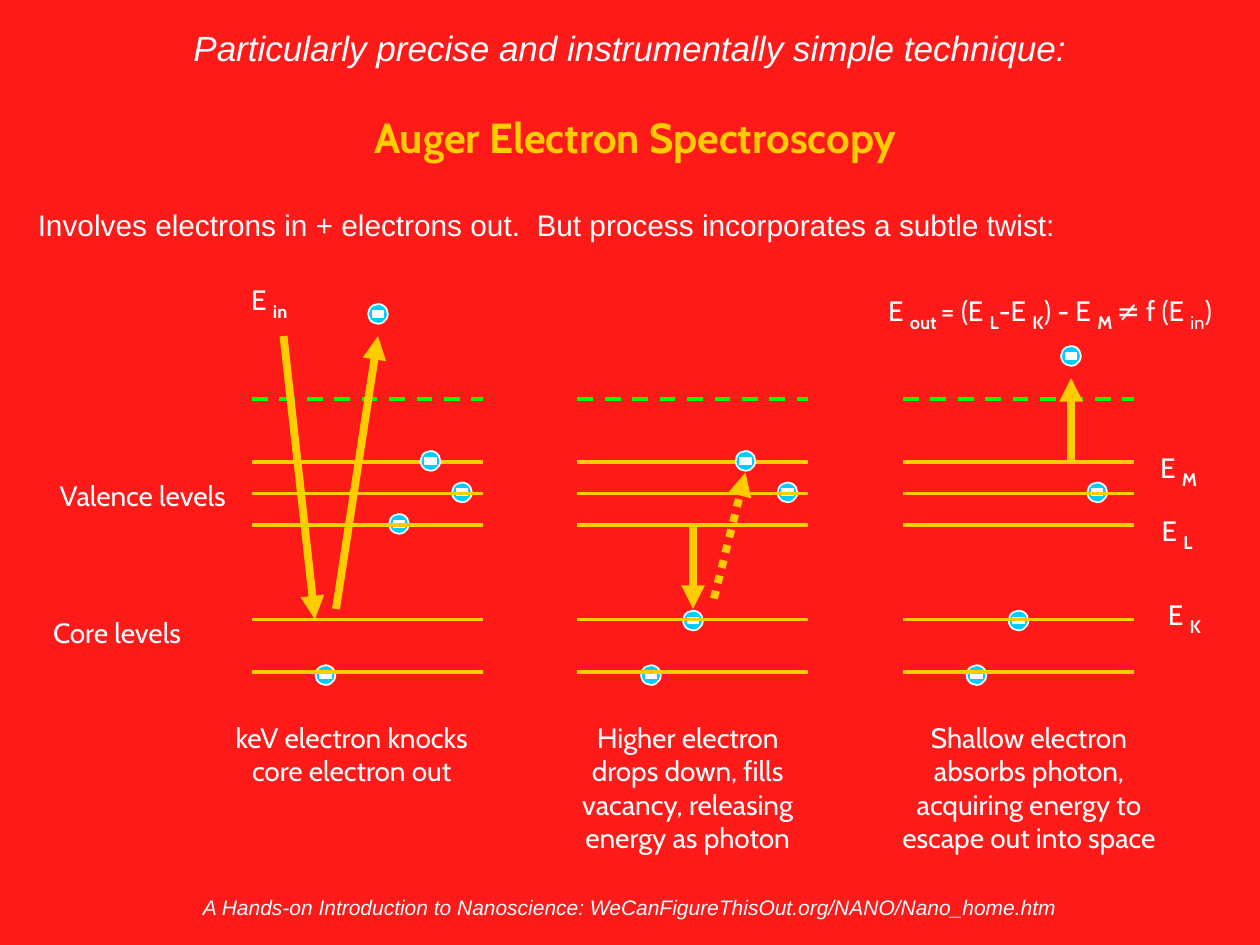
from dataclasses import dataclass
from typing import Optional

from lxml.etree import SubElement
from pptx import Presentation
from pptx.dml.color import RGBColor
from pptx.enum.dml import MSO_LINE
from pptx.enum.shapes import MSO_CONNECTOR, MSO_SHAPE
from pptx.enum.text import MSO_ANCHOR, PP_ALIGN
from pptx.oxml.ns import qn
from pptx.util import Inches, Pt

COLORS = {
    "background": "FF1A1A",
    "gold": "FFCC00",
    "green": "00FF00",
    "electron": "00CCFF",
    "white": "FFFFFF",
    "footer": "E5FFFF",
}
CELL = Inches(10) // 120
LEVEL_WIDTH = 22
PANEL_START, PANEL_STEP = 24, 31
VACUUM_ROW, M_ROW = 38, 44
LOWER_ROWS = (47, 50, 59, 64)
CAPTION_ROW = 68
ELECTRON_SIZE = 1.88
SIGN_WIDTH = 1.16


@dataclass(frozen=True)
class Run:
    text: str
    size: float = 16
    font: str = "Cabin"
    color: str = "white"
    bold: bool = False
    italic: bool = False
    subscript: bool = False


@dataclass(frozen=True)
class Label:
    column: float
    row: float
    columns: float
    rows: float
    runs: tuple[Run, ...]
    anchor: MSO_ANCHOR = MSO_ANCHOR.TOP


@dataclass(frozen=True)
class Arrow:
    start: tuple[float, float]
    end: tuple[float, float]
    dash: Optional[MSO_LINE] = None


@dataclass(frozen=True)
class Panel:
    caption: str
    caption_offset: float
    caption_columns: float
    electrons: tuple[tuple[float, float], ...]
    arrows: tuple[Arrow, ...]


def sub(text: str, bold: bool = True) -> Run:
    return Run(text, size=18, bold=bold, subscript=True)


PANELS = (
    Panel(
        "keV electron knocks core electron out", -3, 25,
        ((7, 64.3), (12, 29.9), (14, 49.9), (20, 46.9), (17, 43.9)),
        (Arrow((3, 32), (6, 59)), Arrow((8, 58), (12, 32))),
    ),
    Panel(
        "Higher electron drops down, fills vacancy, releasing energy as photon", -2, 25,
        ((7, 64.3), (11, 59.1), (20, 46.9), (16, 43.9)),
        (Arrow((11, 50), (11, 58)), Arrow((13, 57), (16, 45), MSO_LINE.ROUND_DOT)),
    ),
    Panel(
        "Shallow electron absorbs photon, acquiring energy to escape out into space", -2, 28,
        ((7, 64.3), (11, 59.1), (18.5, 46.9), (16, 33.9)),
        (Arrow((16, 44), (16, 36)),),
    ),
)

LABELS = (
    Label(4, 84.7, 112, 3.5, (Run(
        "A Hands-on Introduction to Nanoscience: WeCanFigureThisOut.org/NANO/Nano_home.htm",
        12, "Arial", "footer", italic=True),), MSO_ANCHOR.BOTTOM),
    Label(4, 1, 112, 7, (Run(
        "Particularly precise and instrumentally simple technique:",
        20, "Arial", italic=True),), MSO_ANCHOR.MIDDLE),
    Label(21, 26, 9.3, 5.4, (Run("E "), sub("in"))),
    Label(3, 58, 16.3, 4.3, (Run("Core levels"),)),
    Label(2, 45, 23.2, 4.3, (Run("Valence levels"),)),
    Label(108, 42, 8.5, 5.4, (Run("E "), sub("M"))),
    Label(106.8, 48, 10.6, 5.4, (Run("E "), sub("L"))),
    Label(107.3, 56, 11, 5.4, (Run("E "), sub("K"))),
    Label(80, 27, 40, 5.4, (
        Run("E "), sub("out "), Run("= (E "), sub("L"), Run("-E "), sub("K"),
        Run(") - E "), sub("M "), Run("≠ f (E "), sub("in", bold=False), Run(")"))),
)


def cells(count: float) -> int:
    return round(count * CELL)


def rgb(name: str) -> RGBColor:
    return RGBColor.from_string(COLORS[name])


def add_runs(paragraph, runs: tuple[Run, ...]) -> None:
    for item in runs:
        run = paragraph.add_run()
        run.text = item.text
        font = run.font
        font.size, font.name = Pt(item.size), item.font
        font.bold, font.italic = item.bold, item.italic
        font.color.rgb = rgb(item.color)
        if item.subscript:
            run._r.get_or_add_rPr().set("baseline", "-25000")


def add_label(shapes, label: Label):
    box = shapes.add_textbox(
        cells(label.column), cells(label.row), cells(label.columns), cells(label.rows))
    frame = box.text_frame
    frame.word_wrap = True
    frame.vertical_anchor = label.anchor
    frame.margin_left = frame.margin_right = Inches(0.05)
    frame.margin_top = frame.margin_bottom = Inches(0.05)
    paragraph = frame.paragraphs[0]
    paragraph.alignment = PP_ALIGN.CENTER
    add_runs(paragraph, label.runs)
    return frame


def add_line(shapes, start: tuple[float, float], end: tuple[float, float], color: str,
             width: float, dash: Optional[MSO_LINE] = None, arrow: bool = False) -> None:
    connector = shapes.add_connector(
        MSO_CONNECTOR.STRAIGHT, *(cells(value) for value in (*start, *end)))
    connector.line.color.rgb = rgb(color)
    connector.line.width = Pt(width)
    if dash is not None:
        connector.line.dash_style = dash
    if arrow:
        SubElement(connector.line._get_or_add_ln(), qn("a:tailEnd"), type="triangle")
    SubElement(connector._element.spPr, qn("a:effectLst"))


def add_electron(shapes, column: float, row: float) -> None:
    group = shapes.add_group_shape()
    half = ELECTRON_SIZE / 2
    circle = group.shapes.add_shape(
        MSO_SHAPE.OVAL, cells(column - half), cells(row - half),
        cells(ELECTRON_SIZE), cells(ELECTRON_SIZE))
    circle.shadow.inherit = False
    circle.fill.solid()
    circle.fill.fore_color.rgb = rgb("electron")
    circle.line.color.rgb = rgb("white")
    circle.line.width = Pt(1)
    reach = SIGN_WIDTH / 2
    add_line(group.shapes, (column - reach, row), (column + reach, row), "white", 4.5)


def add_level(shapes, left: float, row: float, color: str = "gold",
              dash: Optional[MSO_LINE] = None) -> None:
    add_line(shapes, (left, row), (left + LEVEL_WIDTH, row), color, 2.25, dash)


def add_panel(shapes, panel: Panel, left: float) -> None:
    add_level(shapes, left, M_ROW)
    add_level(shapes, left, VACUUM_ROW, "green", MSO_LINE.DASH)
    for column, row in panel.electrons:
        add_electron(shapes, left + column, row)
    for arrow in panel.arrows:
        (start_column, start_row), (end_column, end_row) = arrow.start, arrow.end
        add_line(shapes, (left + start_column, start_row), (left + end_column, end_row),
                 "gold", 4.5, arrow.dash, arrow=True)
    for row in LOWER_ROWS:
        add_level(shapes, left, row)
    add_label(shapes, Label(left + panel.caption_offset, CAPTION_ROW,
                            panel.caption_columns, 14, (Run(panel.caption),)))


def add_introduction(shapes) -> None:
    frame = add_label(shapes, Label(3, 10, 115, 14, (
        Run("Auger Electron Spectroscopy", 24, color="gold", bold=True),)))
    paragraph = frame.add_paragraph()
    paragraph.alignment = PP_ALIGN.LEFT
    paragraph.space_before = Pt(26)
    add_runs(paragraph, (Run(
        "Involves electrons in + electrons out.  But process incorporates a subtle twist:",
        17, "Arial"),))


def main() -> None:
    presentation = Presentation()
    presentation.slide_width, presentation.slide_height = Inches(10), Inches(7.5)
    slide = presentation.slides.add_slide(presentation.slide_layouts[6])
    slide.background.fill.solid()
    slide.background.fill.fore_color.rgb = rgb("background")
    add_introduction(slide.shapes)
    for index, panel in enumerate(PANELS):
        add_panel(slide.shapes, panel, PANEL_START + index * PANEL_STEP)
    for label in LABELS:
        add_label(slide.shapes, label)
    presentation.save("out.pptx")


if __name__ == "__main__":
    main()
